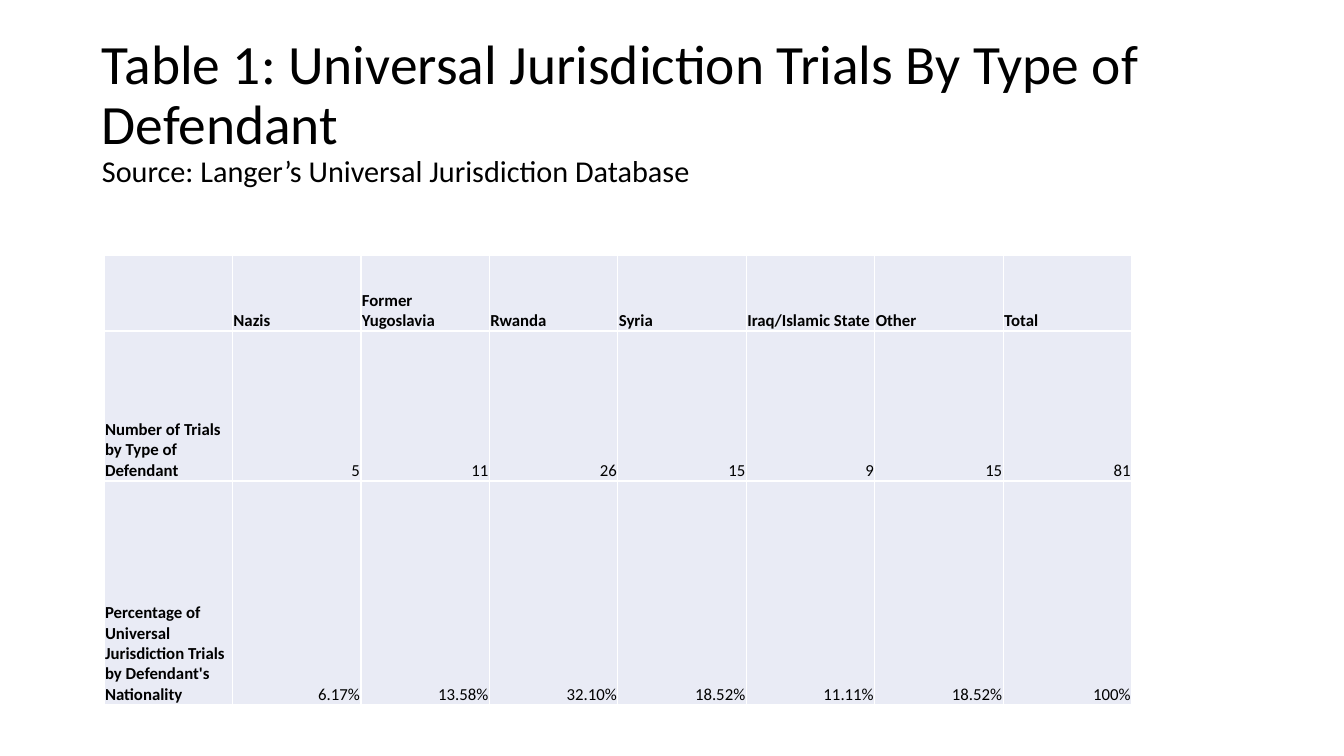
"""Build a slide with a table of universal jurisdiction trials by defendant."""
from typing import NamedTuple

from lxml import etree
from pptx import Presentation
from pptx.dml.color import RGBColor
from pptx.enum.text import MSO_ANCHOR, PP_ALIGN
from pptx.oxml.ns import qn
from pptx.util import Emu, Pt

BOTTOM, MIDDLE = MSO_ANCHOR.BOTTOM, MSO_ANCHOR.MIDDLE
LEFT, RIGHT = PP_ALIGN.LEFT, PP_ALIGN.RIGHT
BLACK = RGBColor(0x00, 0x00, 0x00)
WHITE = RGBColor(0xFF, 0xFF, 0xFF)
PALE = RGBColor(0xE9, 0xEB, 0xF5)
FONT = "Calibri"
SCALE = 914400 / 100.8


class Box(NamedTuple):
    left: int
    top: int
    width: int
    height: int


class Row(NamedTuple):
    height: int
    label: str
    values: list[str]
    header: bool = False


SLIDE = Box(0, 0, 1344, 756)
TITLE = Box(92, 40, 1160, 146)
TABLE = Box(104, 255, 1028, 450)
TITLE_LINES = [
    ("Table 1: Universal Jurisdiction Trials By Type of Defendant", 39.6),
    ("Source: Langer’s Universal Jurisdiction Database", 21.6),
]
ROWS = [
    Row(76, "", ["Nazis", "Former Yugoslavia", "Rwanda", "Syria",
                 "Iraq/Islamic State", "Other", "Total"], True),
    Row(150, "Number of Trials by Type of Defendant",
        ["5", "11", "26", "15", "9", "15", "81"]),
    Row(224, "Percentage of Universal Jurisdiction Trials by Defendant's Nationality",
        ["6.17%", "13.58%", "32.10%", "18.52%", "11.11%", "18.52%", "100%"]),
]


def px(length: int) -> Emu:
    return Emu(round(length * SCALE))


def place(box: Box) -> list[Emu]:
    return [px(side) for side in box]


def style(run, size: float, bold: bool = False) -> None:
    run.font.name = FONT
    run.font.size = Pt(size)
    run.font.bold = bold
    run.font.color.rgb = BLACK


def add_title(slide) -> None:
    frame = slide.shapes.add_textbox(*place(TITLE)).text_frame
    frame.word_wrap = True
    frame.vertical_anchor = MIDDLE
    para = frame.paragraphs[0]
    para.text = "\v".join(text for text, _ in TITLE_LINES)
    para.line_spacing = 0.9
    for run, (_, size) in zip(para.runs, TITLE_LINES):
        style(run, size)


def add_borders(cell) -> None:
    props = cell._tc.get_or_add_tcPr()
    for side in ("lnL", "lnR", "lnT", "lnB"):
        line = etree.SubElement(props, qn(f"a:{side}"), w=str(Pt(1)))
        fill = etree.SubElement(line, qn("a:solidFill"))
        etree.SubElement(fill, qn("a:srgbClr"), val=str(WHITE))


def fill_cell(cell, text: str, bold: bool, align: PP_ALIGN) -> None:
    add_borders(cell)
    cell.fill.solid()
    cell.fill.fore_color.rgb = PALE
    cell.vertical_anchor = BOTTOM
    cell.margin_left = cell.margin_right = cell.margin_top = px(1)
    cell.margin_bottom = 0
    para = cell.text_frame.paragraphs[0]
    para.text = text
    para.alignment = align
    for run in para.runs:
        style(run, 12, bold)


def add_trials(slide) -> None:
    count = len(ROWS[0].values) + 1
    table = slide.shapes.add_table(len(ROWS), count, *place(TABLE)).table
    table.first_row = table.horz_banding = False
    for line, row in zip(table.rows, ROWS):
        line.height = px(row.height)
        for col, text in enumerate([row.label, *row.values]):
            bold = row.header or col == 0
            fill_cell(line.cells[col], text, bold, LEFT if bold else RIGHT)


def main() -> None:
    deck = Presentation()
    deck.slide_width, deck.slide_height = px(SLIDE.width), px(SLIDE.height)
    slide = deck.slides.add_slide(deck.slide_layouts[6])
    add_title(slide)
    add_trials(slide)
    deck.save("out.pptx")


if __name__ == "__main__":
    main()
